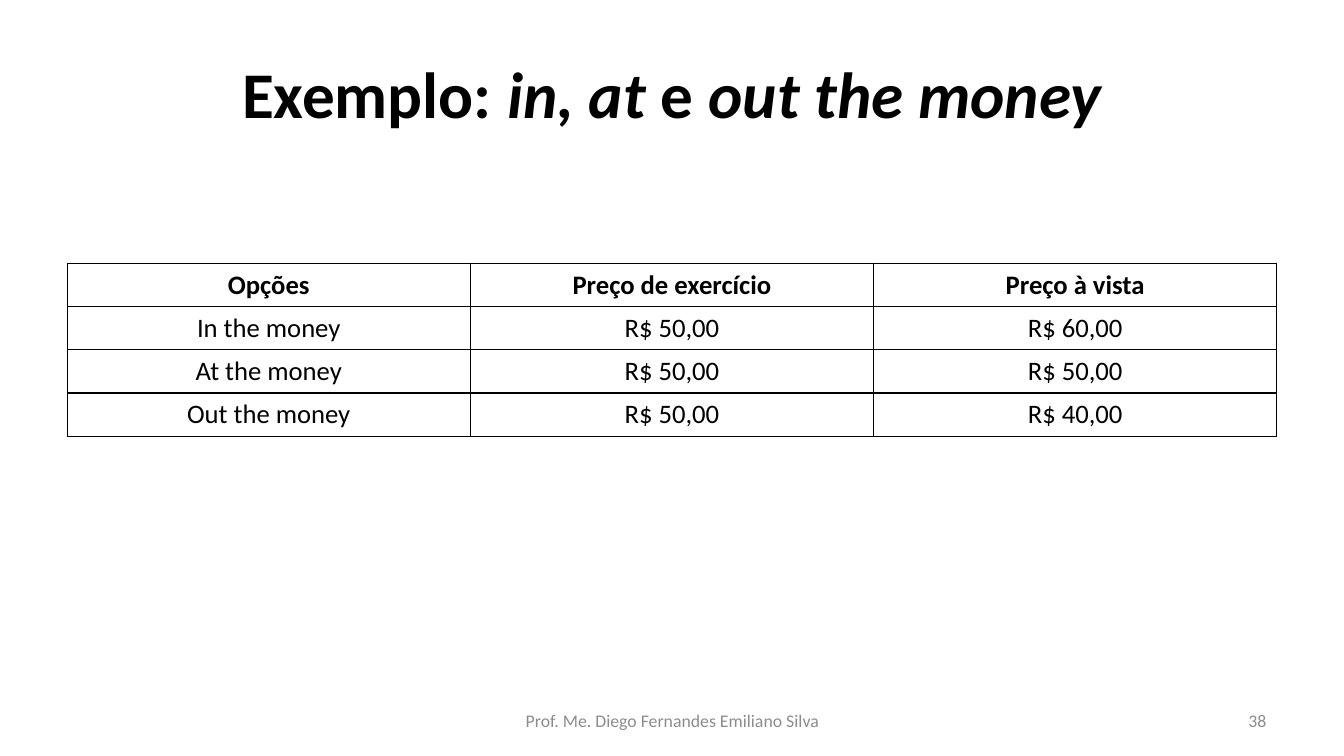
from dataclasses import dataclass

from lxml.etree import SubElement
from pptx import Presentation
from pptx.dml.color import RGBColor
from pptx.enum.text import MSO_ANCHOR, PP_ALIGN
from pptx.oxml.ns import qn
from pptx.util import Inches, Pt


@dataclass(frozen=True)
class Theme:
    font: str = "Calibri"
    ink: str = "000000"
    muted: str = "8C8C8C"
    title_size: int = 44
    table_size: int = 18
    footer_size: int = 12
    border_width: int = 1


THEME = Theme()

TITLE_RUNS = [
    ("Exemplo: ", False),
    ("in, at ", True),
    ("e", False),
    (" out the money", True),
]
OPTION_ROWS = [
    ("Opções", "Preço de exercício", "Preço à vista"),
    ("In the money", "R$ 50,00", "R$ 60,00"),
    ("At the money", "R$ 50,00", "R$ 50,00"),
    ("Out the money", "R$ 50,00", "R$ 40,00"),
]


def format_paragraph(paragraph, size, color, align=PP_ALIGN.CENTER, bold=False):
    paragraph.alignment = align
    font = paragraph.font
    font.name = THEME.font
    font.size = Pt(size)
    font.bold = bold
    font.color.rgb = RGBColor.from_string(color)


def add_title(slide, left, top, width, height):
    title = slide.shapes.title
    title.left, title.top = Inches(left), Inches(top)
    title.width, title.height = Inches(width), Inches(height)
    title.text_frame.vertical_anchor = MSO_ANCHOR.MIDDLE
    heading = title.text_frame.paragraphs[0]
    format_paragraph(heading, THEME.title_size, THEME.ink, bold=True)
    for text, italic in TITLE_RUNS:
        run = heading.add_run()
        run.text = text
        run.font.italic = italic


def set_borders(cell):
    """Draw a thin solid line on all four sides of a cell."""
    properties = cell._tc.get_or_add_tcPr()
    for position, side in enumerate(("lnL", "lnR", "lnT", "lnB")):
        line = SubElement(properties, qn(f"a:{side}"), w=str(Pt(THEME.border_width)))
        fill = SubElement(line, qn("a:solidFill"))
        SubElement(fill, qn("a:srgbClr"), val=THEME.ink)
        properties.insert(position, line)


def add_options_table(slide, left, top, width, height):
    table = slide.shapes.add_table(
        len(OPTION_ROWS), len(OPTION_ROWS[0]),
        Inches(left), Inches(top), Inches(width), Inches(height),
    ).table
    table.horz_banding = False
    for row_index, values in enumerate(OPTION_ROWS):
        for column_index, value in enumerate(values):
            cell = table.cell(row_index, column_index)
            cell.text = value
            cell.fill.background()
            set_borders(cell)
            format_paragraph(cell.text_frame.paragraphs[0], THEME.table_size,
                             THEME.ink, bold=row_index == 0)


def add_footer_text(slide, text, align, left, top, width, height):
    footer = slide.shapes.add_textbox(
        Inches(left), Inches(top), Inches(width), Inches(height)).text_frame
    footer.word_wrap = True
    footer.vertical_anchor = MSO_ANCHOR.MIDDLE
    footer.text = text
    format_paragraph(footer.paragraphs[0], THEME.footer_size, THEME.muted, align)


def main():
    presentation = Presentation()
    presentation.slide_width = Inches(12.6)
    presentation.slide_height = Inches(7.09)
    slide = presentation.slides.add_slide(presentation.slide_layouts[5])

    margin, content_width = 0.63, 11.34
    footer_top, footer_height = 6.57, 0.38
    add_title(slide, margin, 0.28, content_width, 1.18)
    add_options_table(slide, margin, 2.47, content_width, 1.62)
    add_footer_text(slide, "Prof. Me. Diego Fernandes Emiliano Silva",
                    PP_ALIGN.CENTER, 4.31, footer_top, 3.99, footer_height)
    add_footer_text(slide, "38", PP_ALIGN.RIGHT,
                    9.03, footer_top, 2.94, footer_height)
    presentation.save("out.pptx")


if __name__ == "__main__":
    main()
